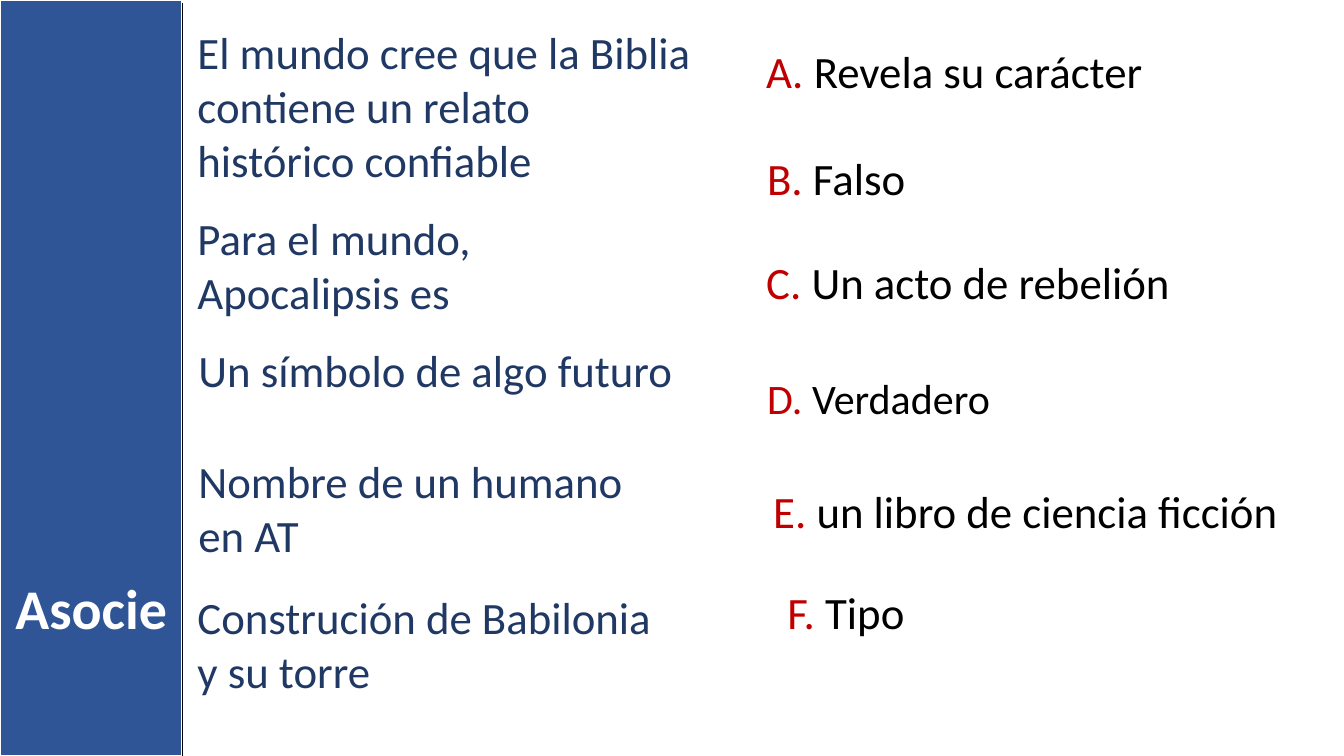
from pptx import Presentation
from pptx.dml.color import RGBColor
from pptx.enum.shapes import MSO_CONNECTOR, MSO_SHAPE
from pptx.enum.text import MSO_AUTO_SIZE, PP_ALIGN
from pptx.oxml.ns import qn
from pptx.util import Pt
from lxml.etree import SubElement

PX = 9144  # EMU per px, 100 px to the inch

THEME = {
    "font": "Calibri",
    "sidebar": RGBColor.from_string("2F5597"),
    "prompt": RGBColor.from_string("203864"),
    "letter": RGBColor.from_string("C00000"),
    "black": RGBColor.from_string("000000"),
    "white": RGBColor.from_string("FFFFFF"),
    "title_size": 40,
    "body_size": 32,
    "small_size": 30,
}

presentation = Presentation()
presentation.slide_width = 1333 * PX
presentation.slide_height = 750 * PX
slide = presentation.slides.add_slide(presentation.slide_layouts[6])


def add_text(*runs, left, top, width, height, size=THEME["body_size"],
             bold=False, align=PP_ALIGN.LEFT):
    """Add a text box; each run is a pair of text and colour."""
    box = slide.shapes.add_textbox(left * PX, top * PX, width * PX, height * PX)
    frame = box.text_frame
    frame.word_wrap = True
    frame.auto_size = MSO_AUTO_SIZE.SHAPE_TO_FIT_TEXT
    paragraph = frame.paragraphs[0]
    paragraph.alignment = align
    for text, color in runs:
        run = paragraph.add_run()
        run.text = text
        run.font.name = THEME["font"]
        run.font.size = Pt(size)
        run.font.bold = bold
        run.font.color.rgb = color


# Sidebar
sidebar = slide.shapes.add_shape(MSO_SHAPE.RECTANGLE, 0, 0, 181 * PX, 750 * PX)
sidebar.shadow.inherit = False
sidebar.fill.solid()
sidebar.fill.fore_color.rgb = THEME["sidebar"]
sidebar.line.color.rgb = THEME["white"]
sidebar.line.width = Pt(1.5)

# Prompts: text, left, top, width, height
prompts = [
    ("El mundo cree que la Biblia contiene un relato histórico confiable",
     186, 20, 511, 172),
    ("Para el mundo, Apocalipsis es", 186, 204, 494, 118),
    ("Un símbolo de algo futuro", 187, 335, 510, 64),
    ("Nombre de un humano en AT", 187, 445, 494, 118),
    ("Construción de Babilonia y su torre", 186, 580, 494, 118),
]
for text, left, top, width, height in prompts:
    add_text((text, THEME["prompt"]), left=left, top=top, width=width, height=height)

# Answers: letter, text, left, top, width, height, size
body, small = THEME["body_size"], THEME["small_size"]
answers = [
    ("A", "Revela su carácter", 750, 38, 504, 64, body),
    ("B", "Falso", 751, 145, 529, 64, body),
    ("C", "Un acto de rebelión", 750, 248, 488, 64, body),
    ("D", "Verdadero", 751, 365, 529, 61, small),
    ("E", "un libro de ciencia ficción", 757, 475, 553, 64, body),
    ("F", "Tipo", 771, 575, 415, 64, body),
]
for letter, text, left, top, width, height, size in answers:
    add_text((f"{letter}. ", THEME["letter"]), (text, THEME["black"]),
             left=left, top=top, width=width, height=height, size=size)

# Sidebar title
add_text(("Asocie", THEME["white"]), left=0, top=564, width=181, height=77,
         size=THEME["title_size"], bold=True, align=PP_ALIGN.CENTER)

# Sidebar edge
edge = slide.shapes.add_connector(
    MSO_CONNECTOR.STRAIGHT, 181 * PX, 3 * PX, 181 * PX, 750 * PX)
edge.line.color.rgb = THEME["black"]
edge.line.width = Pt(1)
SubElement(edge._element.spPr, qn("a:effectLst"))

presentation.save("out.pptx")
